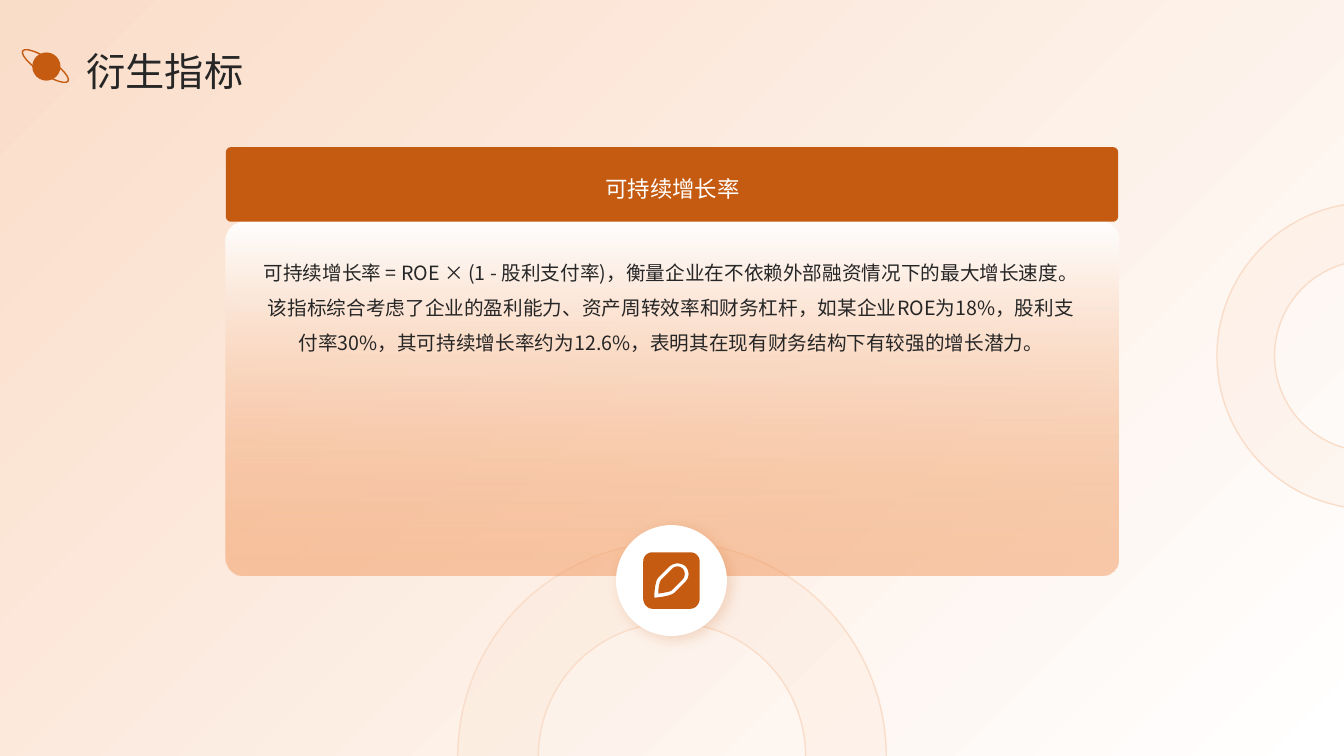
from lxml.etree import SubElement
from pptx import Presentation
from pptx.dml.color import RGBColor
from pptx.enum.shapes import MSO_SHAPE
from pptx.enum.text import MSO_ANCHOR, MSO_AUTO_SIZE, PP_ALIGN
from pptx.oxml.ns import qn
from pptx.util import Inches, Pt

FONT = "Noto Sans CJK SC"
COLORS = {
    "accent": "C55A11",
    "peach": "FADDC9",
    "orange": "F1985C",
    "white": "FFFFFF",
    "text": "262626",
}
BODY = (
    "可持续增长率 = ROE × (1 - 股利支付率)，衡量企业在不依赖外部融资情况下的最大增长速度。"
    "该指标综合考虑了企业的盈利能力、资产周转效率和财务杠杆，如某企业ROE为18%，"
    "股利支付率30%，其可持续增长率约为12.6%，表明其在现有财务结构下有较强的增长潜力。"
)
# Each contour starts with a point; then two numbers are a line, six a cubic curve.
PENCIL_ICON = [
    [(6.72, 5.62), (6.74, 5.62, 6.76, 5.63, 6.77, 5.64), (6.8, 5.67, 6.8, 5.72, 6.77, 5.75),
     (6.66, 5.86), (6.65, 5.87, 6.59, 5.88, 6.53, 5.89), (6.53, 5.83, 6.54, 5.77, 6.56, 5.75),
     (6.67, 5.64), (6.68, 5.63, 6.7, 5.62, 6.72, 5.62)],
    [(6.72, 5.59), (6.69, 5.59, 6.67, 5.6, 6.64, 5.62), (6.53, 5.73),
     (6.49, 5.77, 6.49, 5.93, 6.49, 5.93), (6.49, 5.93, 6.65, 5.92, 6.69, 5.88),
     (6.8, 5.77), (6.84, 5.73, 6.84, 5.66, 6.8, 5.62), (6.78, 5.6, 6.75, 5.59, 6.72, 5.59)],
    [(6.47, 5.48), (6.85, 5.48), (6.9, 5.48, 6.94, 5.52, 6.94, 5.57), (6.94, 5.94),
     (6.94, 5.99, 6.9, 6.04, 6.85, 6.04), (6.47, 6.04), (6.42, 6.04, 6.38, 5.99, 6.38, 5.94),
     (6.38, 5.57), (6.38, 5.52, 6.42, 5.48, 6.47, 5.48)],
]


def rgb(name):
    return RGBColor.from_string(COLORS[name])


def set_alpha(color_element, percent):
    SubElement(color_element, qn("a:alpha"), val=str(percent * 1000))


def paint(shape, fill=None, line=None):
    shape.shadow.inherit = False
    if fill:
        shape.fill.solid()
        shape.fill.fore_color.rgb = rgb(fill)
    else:
        shape.fill.background()
    if line:
        shape.line.color.rgb = rgb(line)
        shape.line.width = Pt(1)
    else:
        shape.line.fill.background()


def add_shape(shapes, kind, box, fill=None, line=None, adjustment=None):
    shape = shapes.add_shape(kind, *map(Inches, box))
    paint(shape, fill, line)
    if adjustment is not None:
        shape.adjustments[0] = adjustment
    return shape


def set_gradient(shape, end_color, angle, end_position=1.0):
    """Fade from white to end_color; angle is counter-clockwise."""
    shape.fill.gradient()
    shape.fill.gradient_angle = angle
    start, end = shape.fill.gradient_stops
    start.color.rgb, start.position = rgb("white"), 0
    end.color.rgb, end.position = rgb(end_color), end_position


def add_ring(shapes, left, top, size):
    ring = add_shape(shapes, MSO_SHAPE.DONUT, (left, top, size, size), "peach", "peach", 0.188)
    set_alpha(ring.element.spPr.find(qn("a:solidFill"))[0], 20)


def add_soft_shadow(shape):
    effects = shape.element.spPr.find(qn("a:effectLst"))
    shadow = SubElement(effects, qn("a:outerShdw"), blurRad=str(Pt(10)), dist=str(Pt(4)),
                        dir=str(45 * 60000), algn="tl", rotWithShape="0")
    set_alpha(SubElement(shadow, qn("a:srgbClr"), val=COLORS["accent"]), 20)


def flatten(contour, steps=8):
    """Turn a contour of lines and cubic curves, in inches, into points in EMU."""
    points = [contour[0]]
    for segment in contour[1:]:
        if len(segment) == 2:
            points.append(segment)
            continue
        controls = [points[-1], segment[:2], segment[2:4], segment[4:]]
        for step in range(1, steps + 1):
            t = step / steps
            weights = ((1 - t) ** 3, 3 * t * (1 - t) ** 2, 3 * t * t * (1 - t), t ** 3)
            points.append(tuple(sum(w * point[axis] for w, point in zip(weights, controls))
                                for axis in (0, 1)))
    return [(Inches(x), Inches(y)) for x, y in points]


def add_icon(shapes, contours, fill):
    outlines = [flatten(contour) for contour in contours]
    builder = shapes.build_freeform(*outlines[0][0])
    for index, points in enumerate(outlines):
        if index:
            builder.move_to(*points[0])
        builder.add_line_segments(points[1:], close=True)
    paint(builder.convert_to_shape(), fill)


def write_text(shape, box, text, size, color, spacing, align=PP_ALIGN.CENTER,
               anchor=MSO_ANCHOR.MIDDLE):
    shape.left, shape.top, shape.width, shape.height = map(Inches, box)
    frame = shape.text_frame
    frame.word_wrap = True
    frame.auto_size = MSO_AUTO_SIZE.NONE
    frame.vertical_anchor = anchor
    frame.margin_left = frame.margin_right = frame.margin_top = frame.margin_bottom = 0
    frame.text = text
    paragraph = frame.paragraphs[0]
    paragraph.alignment = align
    paragraph.line_spacing = spacing
    font = paragraph.font
    font.size = Pt(size)
    font.color.rgb = rgb(color)
    font.name = FONT
    properties = paragraph._p.pPr.find(qn("a:defRPr"))
    SubElement(properties, qn("a:ea"), typeface=FONT)


def add_text(shapes, box, *args, **options):
    write_text(shapes.add_textbox(*map(Inches, box)), box, *args, **options)


def add_backdrop(shapes):
    backdrop = add_shape(shapes, MSO_SHAPE.RECTANGLE, (0, 0, 13.33, 7.5))
    set_gradient(backdrop, "peach", 135)
    shapes.element.insert(2, backdrop.element)  # behind the title


def add_card(shapes):
    panel = add_shape(shapes, MSO_SHAPE.ROUNDED_RECTANGLE, (2.24, 2.2, 8.85, 3.51),
                      adjustment=0.053)
    set_gradient(panel, "orange", 270, 0.95)
    set_alpha(panel.element.spPr.findall(".//" + qn("a:srgbClr"))[1], 50)
    add_shape(shapes, MSO_SHAPE.ROUNDED_RECTANGLE, (2.24, 1.46, 8.85, 0.74), "accent",
              adjustment=0.068)
    badge = shapes.add_group_shape()
    add_soft_shadow(add_shape(badge.shapes, MSO_SHAPE.OVAL, (6.11, 5.21, 1.1, 1.1), "white"))
    add_icon(badge.shapes, PENCIL_ICON, "accent")
    add_text(shapes, (2.59, 2.47, 8.13, 2.49), BODY, 14, "text", 1.5, anchor=MSO_ANCHOR.TOP)
    add_text(shapes, (2.63, 1.46, 8.08, 0.74), "可持续增长率", 16, "white", 1.3)


def add_planet(shapes):
    planet = shapes.add_group_shape()
    add_shape(planet.shapes, MSO_SHAPE.OVAL, (0.32, 0.52, 0.28, 0.28), "accent")
    orbit = add_shape(planet.shapes, MSO_SHAPE.OVAL, (0.18, 0.58, 0.54, 0.15), line="accent")
    orbit.rotation = 33.8


def main():
    presentation = Presentation()
    presentation.slide_width = Inches(13.33)
    presentation.slide_height = Inches(7.5)
    slide = presentation.slides.add_slide(presentation.slide_layouts[5])
    shapes = slide.shapes

    add_backdrop(shapes)
    add_ring(shapes, 4.54, 5.38, 4.25)
    add_card(shapes)
    add_ring(shapes, 12.07, 2.01, 3.04)
    write_text(shapes.title, (0.86, 0.42, 11.67, 0.51), "衍生指标", 28, "text", 1.1,
               align=PP_ALIGN.LEFT)
    add_planet(shapes)
    presentation.save("out.pptx")


if __name__ == "__main__":
    main()
